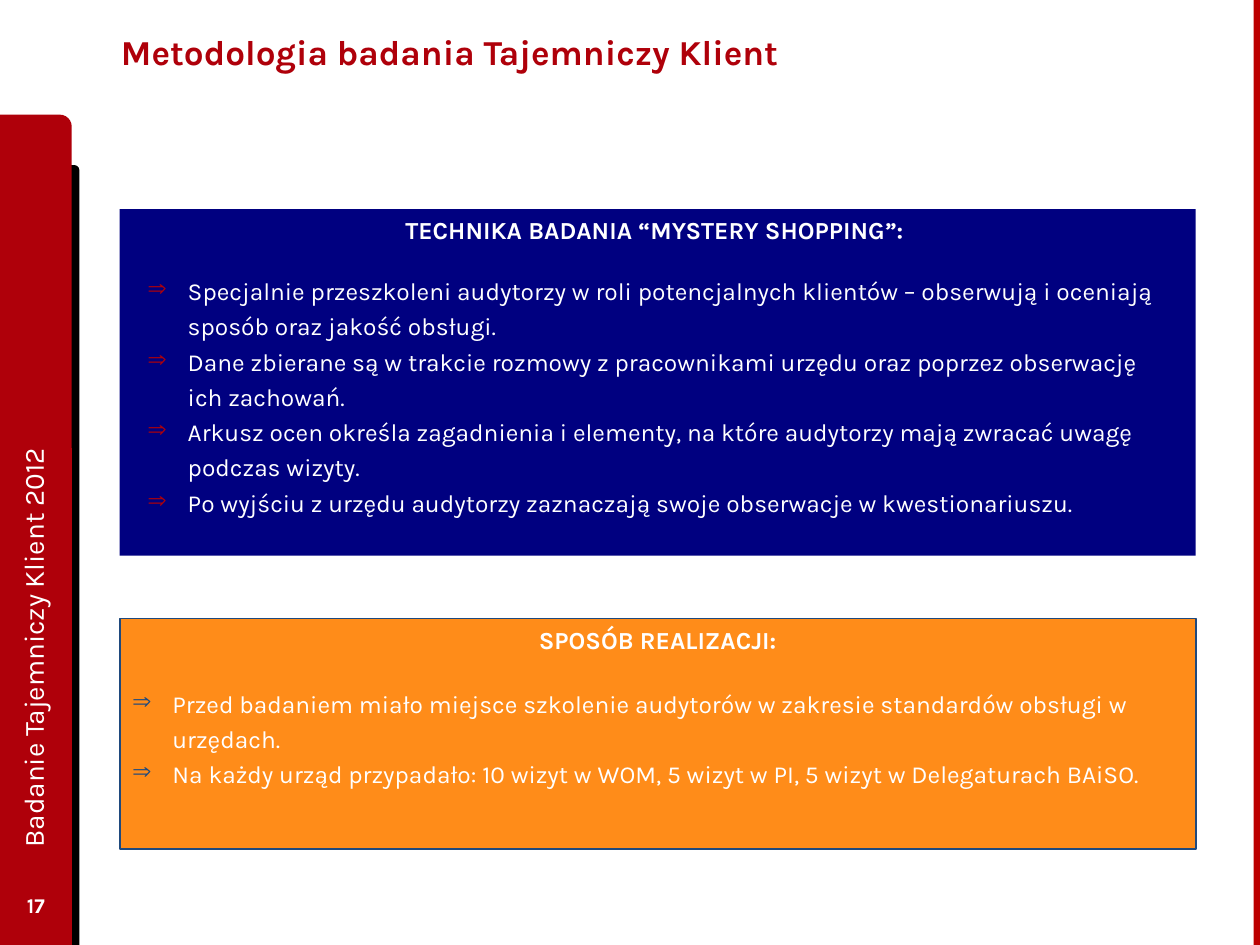
from lxml import etree
from pptx import Presentation
from pptx.dml.color import RGBColor
from pptx.enum.shapes import MSO_SHAPE
from pptx.enum.text import MSO_ANCHOR, PP_ALIGN
from pptx.oxml.ns import qn
from pptx.util import Inches, Pt

RECT, ROUND = MSO_SHAPE.RECTANGLE, MSO_SHAPE.ROUND_1_RECTANGLE
LEFT, CENTER = PP_ALIGN.LEFT, PP_ALIGN.CENTER
MIDDLE, TOP = MSO_ANCHOR.MIDDLE, MSO_ANCHOR.TOP

FONT = "Karla"
COLORS = {"red": "AF000A", "edge": "BD0000", "black": "000000", "white": "FFFFFF",
          "navy": "000080", "orange": "FF8C19", "blue": "1F497D"}

TITLE = "Metodologia badania Tajemniczy Klient"
SIDE = "Badanie Tajemniczy Klient 2012"
PAGE = "17"

# Frame shapes: preset, left, top, width, height, fill
FRAME = [
    (ROUND, 0.39, 1.31, 0.24, 6.19, "black"),
    (ROUND, 0, 0.91, 0.57, 6.59, "red"),
    (RECT, 9.95, 0, 0.05, 7.5, "edge"),
]

PANELS = [
    {"top": 4.91, "height": 1.83, "inset": 0.1, "gap": 16.5,
     "fill": "orange", "line": "blue", "mark": "blue",
     "head": "SPOSÓB REALIZACJI:",
     "items": [
         "Przed badaniem miało miejsce szkolenie audytorów w zakresie standardów obsługi w urzędach.",
         "Na każdy urząd przypadało: 10 wizyt w WOM, 5 wizyt w PI, 5 wizyt w Delegaturach BAiSO.",
     ]},
    {"top": 1.66, "height": 2.75, "inset": 0.22, "gap": 14.5,
     "fill": "navy", "line": None, "mark": "red",
     "head": "TECHNIKA BADANIA “MYSTERY SHOPPING”: ",
     "items": [
         "Specjalnie przeszkoleni audytorzy w roli potencjalnych klientów – obserwują i oceniają sposób oraz jakość obsługi.",
         "Dane zbierane są w trakcie rozmowy z pracownikami urzędu oraz poprzez obserwację ich zachowań.",
         "Arkusz ocen określa zagadnienia i elementy, na które audytorzy mają zwracać uwagę podczas wizyty.",
         "Po wyjściu z urzędu audytorzy zaznaczają swoje obserwacje w kwestionariuszu.",
     ]},
]


def color(name):
    return RGBColor.from_string(COLORS[name])


def style(para, size, bold=False, tint="white", align=LEFT):
    para.alignment = align
    for run in para.runs:
        font = run.font
        font.name, font.size, font.bold = FONT, Pt(size), bold
        font.color.rgb = color(tint)


def setup(frame, inset=0.1, anchor=MIDDLE):
    frame.word_wrap = True
    frame.vertical_anchor = anchor
    frame.margin_left = frame.margin_right = Inches(inset)
    frame.margin_top = frame.margin_bottom = Inches(0.05)


def add_box(slide, kind, left, top, width, height, fill, line=None):
    box = slide.shapes.add_shape(kind, *map(Inches, (left, top, width, height)))
    box.shadow.inherit = False
    box.fill.solid()
    box.fill.fore_color.rgb = color(fill)
    if line:
        box.line.color.rgb = color(line)
        box.line.width = Pt(1)
    else:
        box.line.fill.background()
    return box


def add_label(slide, text, left, top, width, height, **look):
    box = slide.shapes.add_textbox(*map(Inches, (left, top, width, height)))
    setup(box.text_frame)
    box.text_frame.text = text
    style(box.text_frame.paragraphs[0], **look)
    return box


def add_bullet(para, tint):
    props = para._p.get_or_add_pPr()
    fill = etree.SubElement(props, qn("a:buClr"))
    etree.SubElement(fill, qn("a:srgbClr"), val=COLORS[tint])
    etree.SubElement(props, qn("a:buChar"), char="⇒")


def add_panel(slide, panel):
    box = add_box(slide, RECT, 0.95, panel["top"], 8.54, panel["height"],
                  panel["fill"], panel["line"])
    frame = box.text_frame
    setup(frame, panel["inset"], TOP)
    frame.text = "\n".join([panel["head"], *panel["items"]])
    for i, para in enumerate(frame.paragraphs):
        props = para._p.get_or_add_pPr()
        props.set("marL", str(Inches(0.32)))
        props.set("indent", str(Inches(-0.32)))
        if i == 0:
            para.space_after = Pt(panel["gap"])
            style(para, 14, bold=True, align=CENTER)
        else:
            para.line_spacing = 1.2
            add_bullet(para, panel["mark"])
            style(para, 14)


def main():
    deck = Presentation()
    deck.slide_width, deck.slide_height = Inches(10), Inches(7.5)
    slide = deck.slides.add_slide(deck.slide_layouts[5])

    # Side tab and right edge
    for part in FRAME:
        add_box(slide, *part)

    # Title
    title = slide.shapes.title
    title.left, title.top, title.width, title.height = map(
        Inches, (0.86, 0.05, 7.77, 0.72))
    setup(title.text_frame)
    title.text_frame.text = TITLE
    style(title.text_frame.paragraphs[0], 20, bold=True, tint="red")

    # Side caption, reading upwards
    side = add_label(slide, SIDE, -2.62, 3.69, 5.76, 0.51, size=16)
    side.rotation = 270

    # Text panels
    for panel in PANELS:
        add_panel(slide, panel)

    # Page number
    add_label(slide, PAGE, 0, 6.98, 0.57, 0.4, size=12, bold=True, align=CENTER)

    deck.save("out.pptx")


if __name__ == "__main__":
    main()
